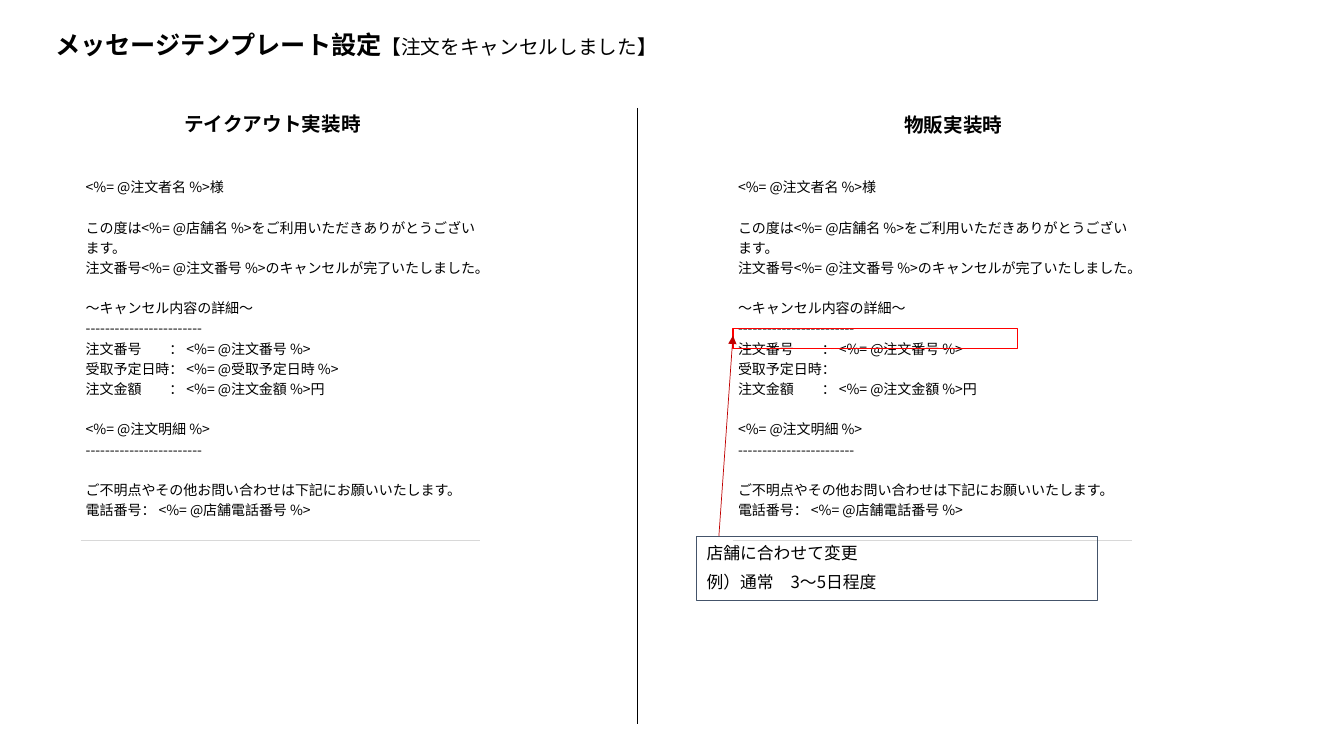
from dataclasses import dataclass

from lxml.etree import SubElement
from pptx import Presentation
from pptx.dml.color import RGBColor
from pptx.enum.shapes import MSO_CONNECTOR as Connector, MSO_SHAPE as Shape
from pptx.enum.text import MSO_ANCHOR as Anchor, PP_ALIGN as Align
from pptx.oxml import parse_xml
from pptx.oxml.ns import nsdecls, qn
from pptx.util import Inches, Pt


@dataclass(frozen=True)
class Theme:
    font: str = "Noto Sans CJK JP"
    text: str = "000000"
    rule: str = "D8D8D8"
    callout: str = "44546A"
    highlight: str = "FF0000"
    arrow: str = "C00000"
    title_size: float = 18
    heading_size: float = 14
    callout_size: float = 12
    body_size: float = 10
    body_gap: float = 14.5


THEME = Theme()
MESSAGE_SIZE = (3.96, 3.22)
HEADING_SIZE = (3.78, 0.34)


def message_blocks(pickup_time):
    """Return the message as blocks of lines; a gap separates the blocks."""
    divider = "-" * 24
    return [
        ["<%= @注文者名 %>様"],
        ["この度は<%= @店舗名 %>をご利用いただきありがとうございます。",
         "注文番号<%= @注文番号 %>のキャンセルが完了いたしました。"],
        ["〜キャンセル内容の詳細〜",
         divider,
         "注文番号　　： <%= @注文番号 %>",
         f"受取予定日時：{pickup_time}",
         "注文金額　　： <%= @注文金額 %>円"],
        ["<%= @注文明細 %>", divider],
        ["ご不明点やその他お問い合わせは下記にお願いいたします。",
         "電話番号： <%= @店舗電話番号 %>"],
    ]


def add_run(paragraph, text, size, bold=False):
    run = paragraph.add_run()
    run.text = text
    font = run.font
    font.name, font.size, font.bold = THEME.font, Pt(size), bold
    font.color.rgb = RGBColor.from_string(THEME.text)
    SubElement(run._r.get_or_add_rPr(), qn("a:ea")).set("typeface", THEME.font)


def write_paragraph(frame, runs, first=False, before=0, spacing=None):
    """Write one paragraph from (text, size, bold) runs."""
    paragraph = frame.paragraphs[0] if first else frame.add_paragraph()
    paragraph.alignment = Align.LEFT
    paragraph.space_before = Pt(before)
    if spacing:
        paragraph.line_spacing = spacing
    for text, size, bold in runs:
        add_run(paragraph, text, size, bold)


def add_text(slide, box, runs, anchor=Anchor.TOP, **paragraph_format):
    frame = slide.shapes.add_textbox(*map(Inches, box)).text_frame
    frame.word_wrap = True
    frame.vertical_anchor = anchor
    write_paragraph(frame, runs, first=True, **paragraph_format)


def add_line(slide, start, end, color, arrow=False):
    line = slide.shapes.add_connector(
        Connector.STRAIGHT, *map(Inches, (*start, *end)))
    line.line.color.rgb = RGBColor.from_string(color)
    line.line.width = Pt(0.5)
    if arrow:
        SubElement(line.line._get_or_add_ln(), qn("a:tailEnd")).set("type", "triangle")
    SubElement(line._element.spPr, qn("a:effectLst"))


def add_outline(slide, box, color):
    shape = slide.shapes.add_shape(Shape.RECTANGLE, *map(Inches, box))
    shape.shadow.inherit = False
    shape.fill.background()
    shape.line.color.rgb = RGBColor.from_string(color)
    shape.line.width = Pt(0.75)
    return shape


def underline_cell(cell):
    """Leave only the bottom border on the cell."""
    fill = f'<a:solidFill><a:srgbClr val="{THEME.rule}"/></a:solidFill>'
    for index, side in enumerate("LRTB"):
        paint = fill if side == "B" else "<a:noFill/>"
        border = parse_xml(
            f'<a:ln{side} {nsdecls("a")} w="{Pt(0.75)}">{paint}</a:ln{side}>')
        cell._tc.get_or_add_tcPr().insert(index, border)


def add_message(slide, left, top, blocks):
    table = slide.shapes.add_table(
        1, 1, *map(Inches, (left, top, *MESSAGE_SIZE))).table
    table.first_row = table.horz_banding = False
    cell = table.cell(0, 0)
    cell.fill.background()
    underline_cell(cell)
    cell.vertical_anchor = Anchor.MIDDLE
    cell.margin_left = cell.margin_right = Inches(0.05)
    cell.margin_top = cell.margin_bottom = Inches(0.11)
    for block_index, block in enumerate(blocks):
        for line_index, text in enumerate(block):
            starts_block = block_index > 0 and line_index == 0
            write_paragraph(
                cell.text_frame, [(text, THEME.body_size, False)],
                first=block_index == line_index == 0,
                before=THEME.body_gap if starts_block else 0)


def add_callout(slide, box, lines):
    frame = add_outline(slide, box, THEME.callout).text_frame
    frame.word_wrap = True
    frame.vertical_anchor = Anchor.MIDDLE
    for index, text in enumerate(lines):
        write_paragraph(frame, [(text, THEME.callout_size, False)],
                        first=index == 0, before=8, spacing=0.9)


def add_pickup_note(slide, left, top):
    """Mark the pickup line of the message at left, top and explain it."""
    add_callout(slide, (left - 0.36, top + 3.78, 3.98, 0.64),
                ["店舗に合わせて変更", "例）通常　3〜5日程度"])
    add_outline(slide, (left, top + 1.72, 2.82, 0.2), THEME.highlight)
    add_line(slide, (left - 0.14, top + 3.78), (left, top + 1.79),
             THEME.arrow, arrow=True)


def add_heading(slide, left, top, text):
    add_text(slide, (left, top, *HEADING_SIZE),
             [(text, THEME.heading_size, True)])


def add_title(slide, box):
    small = THEME.heading_size
    add_text(slide, box,
             [("メッセージテンプレート設定", THEME.title_size, True),
              ("【", small, True),
              ("注文をキャンセルしました", small, False),
              ("】", small, True)],
             anchor=Anchor.MIDDLE, before=10, spacing=0.9)


def main():
    presentation = Presentation()
    presentation.slide_width = Inches(13.33)
    presentation.slide_height = Inches(7.5)
    slide = presentation.slides.add_slide(presentation.slide_layouts[6])

    takeout_left, goods_left, message_top = 0.8, 7.27, 1.54
    add_message(slide, takeout_left, message_top,
                message_blocks(" <%= @受取予定日時 %>"))
    add_message(slide, goods_left, message_top, message_blocks(""))
    add_line(slide, (6.32, 1.07), (6.32, 7.18), THEME.text)
    add_pickup_note(slide, goods_left, message_top)
    add_heading(slide, 8.87, 1.07, "物販実装時")
    add_heading(slide, 1.73, 1.06, "テイクアウト実装時")
    add_title(slide, (0.45, 0.19, 12.64, 0.53))
    presentation.save("out.pptx")


if __name__ == "__main__":
    main()
